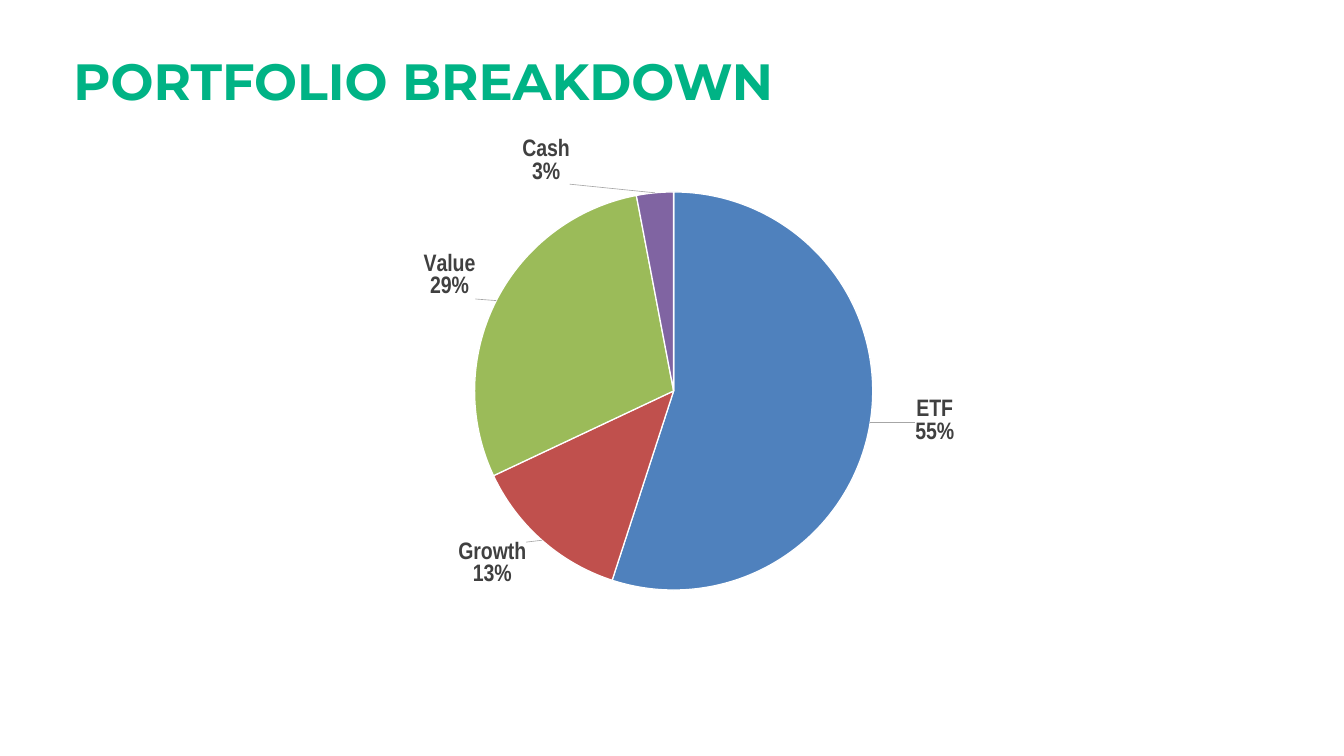
from pptx import Presentation
from pptx.chart.data import CategoryChartData
from pptx.dml.color import RGBColor
from pptx.enum.chart import XL_CHART_TYPE, XL_LABEL_POSITION
from pptx.enum.text import MSO_ANCHOR, MSO_AUTO_SIZE, PP_ALIGN
from pptx.oxml import parse_xml
from pptx.oxml.ns import nsdecls
from pptx.util import Pt


def paint(target, color):
    target.rgb = RGBColor.from_string(color)


def node(tag, attrs="", inner=""):
    return parse_xml(f"<c:{tag} {nsdecls('c', 'a')} {attrs}>{inner}</c:{tag}>")


def layout(**marks):
    inner = "".join(f'<c:{tag} val="{val}"/>' for tag, val in marks.items())
    return node("layout", inner=f"<c:manualLayout>{inner}</c:manualLayout>")


class Deck:
    green, white, dark, gray = "00B385", "FFFFFF", "404040", "A6A6A6"

    def __init__(self, wide, high):
        self.file = Presentation()
        self.file.slide_width, self.file.slide_height = Pt(wide), Pt(high)
        self.slide = self.file.slides.add_slide(self.file.slide_layouts[0])
        spare = self.slide.placeholders[1].element
        spare.getparent().remove(spare)

    def style(self, font, name, size, color, bold=True):
        font.name, font.size, font.bold = name, Pt(size), bold
        paint(font.color, color)

    def title(self, text, left, top, wide, high):
        shape = self.slide.shapes.title
        shape.left, shape.top = Pt(left), Pt(top)
        shape.width, shape.height = Pt(wide), Pt(high)
        frame = shape.text_frame
        frame.text = text
        frame.word_wrap = True
        frame.auto_size = MSO_AUTO_SIZE.NONE
        frame.vertical_anchor = MSO_ANCHOR.BOTTOM
        line = frame.paragraphs[0]
        line.alignment = PP_ALIGN.LEFT
        line.line_spacing = 0.8
        self.style(line.font, "Montserrat", 60, self.green)

    def pie(self, parts, left, top, wide, high, inset, drop, disc):
        data = CategoryChartData(number_format="0")
        data.categories = [part[0] for part in parts]
        data.add_series("Series 1", [part[1] for part in parts])
        chart = self.slide.shapes.add_chart(
            XL_CHART_TYPE.PIE, Pt(left), Pt(top), Pt(wide), Pt(high), data).chart
        chart.has_title = chart.has_legend = False
        self.style(chart.font, "Calibri", 10, "000000", False)
        plot = chart.plots[0]
        plot.vary_by_categories = True
        area = chart.element.xpath(".//c:plotArea")[0]
        for old in area.xpath("c:layout"):
            area.remove(old)
        area.insert(0, layout(layoutTarget="inner", xMode="edge", yMode="edge",
                              x=inset / wide, y=drop / high,
                              w=disc / wide, h=disc / high))
        series = plot.series[0]
        for spot, (_, _, color, across, down) in enumerate(parts):
            point = series.points[spot]
            point.format.fill.solid()
            paint(point.format.fill.fore_color, color)
            paint(point.format.line.color, self.white)
            point.format.line.width = Pt(1.5)
            self.label(point.data_label)
            tag = series.data_labels._element.xpath("c:dLbl")[spot]
            self.place(tag, across / wide, down / high)
        self.leads(series.data_labels)

    def label(self, label):
        self.style(label.font, "Arial Narrow", 28, self.dark)
        label.position = XL_LABEL_POSITION.OUTSIDE_END

    def place(self, tag, x, y):
        for old in tag.xpath("c:layout | c:numFmt"):
            tag.remove(old)
        tag.insert(1, layout(x=x, y=y))
        tag.insert(2, node("numFmt", 'formatCode="0%" sourceLinked="0"'))
        for name, shown in (("Val", 0), ("CatName", 1), ("Percent", 1)):
            tag.xpath(f"c:show{name}")[0].set("val", str(shown))
        tag.xpath("c:showBubbleSize")[0].addnext(node("separator", inner="\n"))

    def leads(self, labels):
        self.style(labels.font, "Arial Narrow", 28, self.dark)
        labels.number_format = "0%"
        labels.number_format_is_linked = False
        labels.show_value = False
        labels.show_category_name = labels.show_percentage = True
        labels.position = XL_LABEL_POSITION.OUTSIDE_END
        root = labels._element
        for old in root.xpath("c:showLeaderLines | c:leaderLines"):
            root.remove(old)
        root.append(node("showLeaderLines", 'val="1"'))
        root.append(node("leaderLines", inner=(
            '<c:spPr><a:ln w="9525"><a:solidFill>'
            f'<a:srgbClr val="{self.gray}"/>'
            '</a:solidFill></a:ln></c:spPr>')))
        root.xpath("c:showBubbleSize")[0].addnext(node("separator", inner="\n"))


def main():
    deck = Deck(1583.28, 890.64)
    deck.title("PORTFOLIO BREAKDOWN", 79.2, 48.24, 1424.88, 84.96)
    deck.pie([("ETF", 55, "4F81BD", 49, -27),
              ("Growth", 13, "C0504D", -16, -1),
              ("Value", 29, "9BBB59", -21, 0),
              ("Cash", 3, "8064A2", -100, -6)],
             316.8, 160.56, 950.4, 570.24, 242.3, 65.6, 469)
    deck.file.save("out.pptx")


if __name__ == "__main__":
    main()
